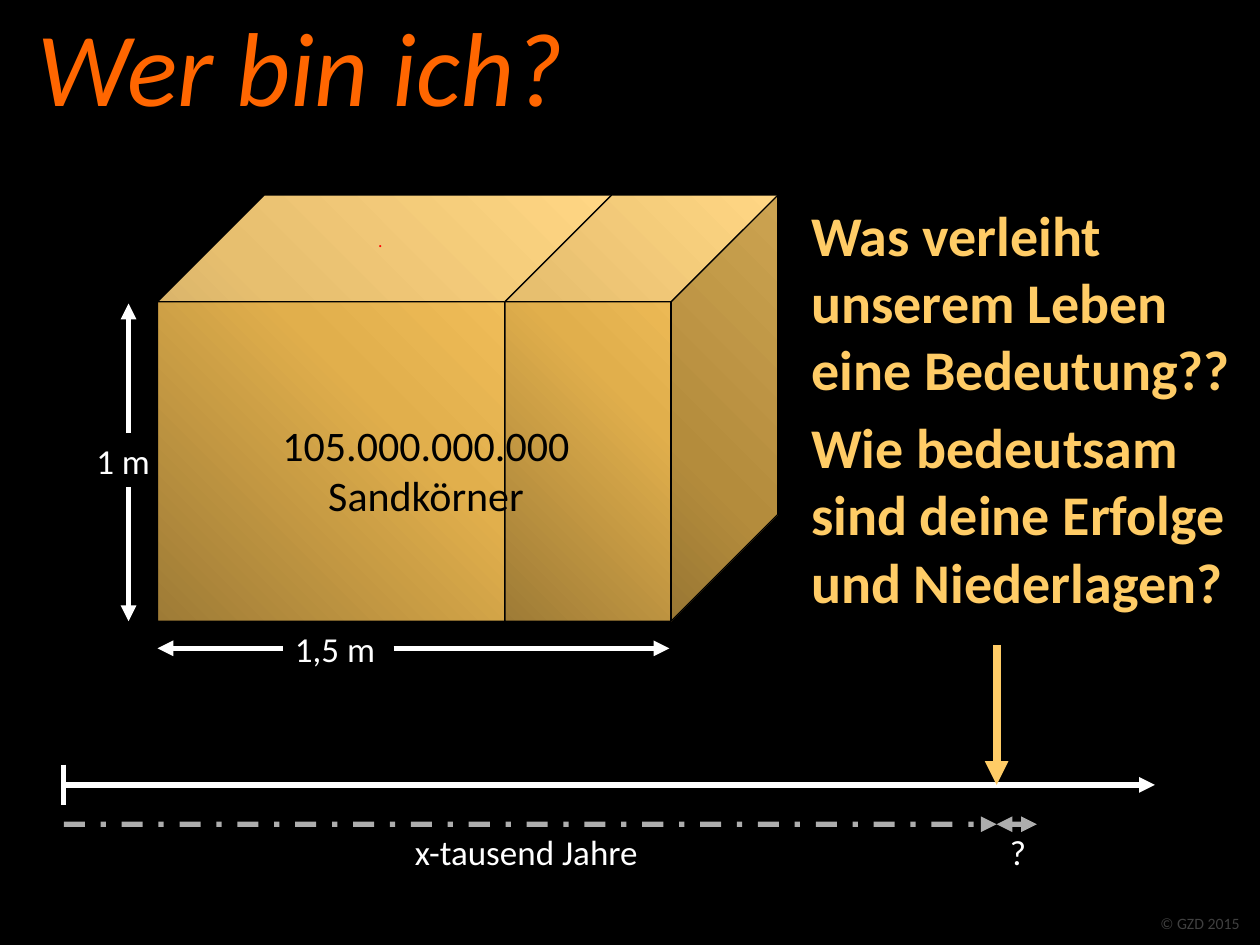
from copy import deepcopy

from lxml import etree
from pptx import Presentation
from pptx.dml.color import RGBColor
from pptx.enum import dml, shapes, text
from pptx.oxml import ns
from pptx.util import Pt

BLACK = RGBColor(0, 0, 0)
WHITE = RGBColor(255, 255, 255)
GRAY = RGBColor(0x40, 0x40, 0x40)
ORANGE = RGBColor(0xFF, 0x66, 0)
RED = RGBColor(255, 0, 0)
YELLOW = RGBColor(0xFF, 0xCC, 0x66)
SAND = ((0, RGBColor(0x9E, 0x7B, 0x36)), (0.5, RGBColor(0xE1, 0xAF, 0x4C)), (1, YELLOW))
LABEL = {"size": Pt(20)}


def add_text(slide, box, lines, color, font, paragraph=None, wrap=False):
    frame = slide.shapes.add_textbox(*map(Pt, box)).text_frame
    frame.word_wrap = wrap
    frame.auto_size = text.MSO_AUTO_SIZE.SHAPE_TO_FIT_TEXT
    frame.text = "\n".join(lines)
    for line in frame.paragraphs:
        for name, value in (paragraph or {}).items():
            setattr(line, name, value)
        line.font.color.rgb = color
        for name, value in {"name": "Calibri", **font}.items():
            setattr(line.font, name, value)


def add_line(slide, start, end, color=WHITE, width=3, ends=("tailEnd",), faint=False):
    """Draw a line with arrowheads at the given ends; faint means dash-dotted and translucent."""
    connector = slide.shapes.add_connector(
        shapes.MSO_CONNECTOR.STRAIGHT, *map(Pt, (*start, *end)))
    line = connector.line
    line.width = Pt(width)
    line.color.rgb = color
    properties = line._get_or_add_ln()
    if faint:
        line.dash_style = dml.MSO_LINE.DASH_DOT
        rgb = properties.find(".//" + ns.qn("a:srgbClr"))
        etree.SubElement(rgb, ns.qn("a:alpha"), val="67000")
    for end_name in ends:
        etree.SubElement(properties, ns.qn("a:" + end_name), type="triangle")
    etree.SubElement(connector._element.spPr, ns.qn("a:effectLst"))


def add_sand_cube(slide, box, depth):
    cube = slide.shapes.add_shape(shapes.MSO_SHAPE.CUBE, *map(Pt, box))
    cube.adjustments[0] = depth / min(box[2:])
    cube.shadow.inherit = False
    cube.fill.gradient()
    cube.fill.gradient_angle = 45
    stop_list = cube._element.spPr.find(".//" + ns.qn("a:gsLst"))
    stop_list.insert(1, deepcopy(stop_list[0]))
    for stop, (position, color) in zip(cube.fill.gradient_stops, SAND):
        stop.position = position
        stop.color.rgb = color
    cube.line.color.rgb = BLACK
    cube.line.width = Pt(0.75)


def add_timeline(slide, left, top, length, today):
    """Place the time axis; today is the distance of the marker from its start."""
    now, span = left + today, top + 22.5
    add_line(slide, (left, top), (left + length, top))
    add_line(slide, (left, top - 11.5), (left, top + 11.5), ends=())
    add_line(slide, (now, top - 80), (now, top), YELLOW, 4.5)
    add_line(slide, (left, span), (now, span), faint=True)
    add_line(slide, (now, span), (now + 23, span), ends=("headEnd", "tailEnd"), faint=True)
    add_text(slide, (left + 193.5, span, 146, 31.5), ["x-tausend Jahre"], WHITE, LABEL)
    add_text(slide, (now + 0.5, span, 22.5, 31.5), ["?"], WHITE, LABEL)


def add_sandbox(slide, left, top, height):
    """Place the block of sand, its dimensions and the grain count."""
    depth = 61
    front, bottom = top + depth, top + height
    add_sand_cube(slide, (left, top, 260.5, height), depth)

    height_x, width_y = left - 16.5, bottom + 15.5
    add_text(slide, (left - 42, top + 136, 47.5, 31.5), ["1 m"], WHITE, LABEL)
    add_line(slide, (height_x, top + 136), (height_x, front + 1))
    add_line(slide, (height_x, top + 167), (height_x, bottom))
    add_text(slide, (left + 71.5, bottom, 63.5, 31.5), ["1,5 m"], WHITE, LABEL)
    add_line(slide, (left + 71.5, width_y), (left, width_y))
    add_line(slide, (left + 135, width_y), (left + 292.5, width_y))
    add_text(slide, (left + 119, top + 16.5, 17, 19.5), ["."], RED, {"size": Pt(10)})

    add_sand_cube(slide, (left + 198.5, top, 156, height), depth)
    add_text(slide, (left + 60.5, top + 124.5, 186, 65.5),
             ["105.000.000.000", "Sandkörner"], BLACK, {"size": Pt(24)},
             {"alignment": text.PP_ALIGN.CENTER})


def main():
    deck = Presentation()
    deck.slide_width, deck.slide_height = Pt(720), Pt(540)
    slide = deck.slides.add_slide(deck.slide_layouts[6])
    slide.background.fill.solid()
    slide.background.fill.fore_color.rgb = BLACK

    add_text(slide, (656, 518.5, 61, 18), ["© GZD 2015"], GRAY, {"size": Pt(9)}, wrap=True)
    add_text(slide, (14.5, 9.5, 690.5, 67.5), ["Wer bin ich?"], ORANGE,
             {"size": Pt(60), "italic": True}, {"line_spacing": Pt(60)}, wrap=True)
    add_timeline(slide, 36.5, 448.5, 623.5, 533)
    add_text(slide, (456.5, 111, 263.5, 246),
             ["Was verleiht unserem Leben eine Bedeutung??",
              "Wie bedeutsam sind deine Erfolge und Niederlagen?"],
             YELLOW, {"size": Pt(32), "bold": True}, {"space_after": Pt(6)}, wrap=True)
    add_sandbox(slide, 90, 111.5, 243.5)
    deck.save("out.pptx")


if __name__ == "__main__":
    main()
